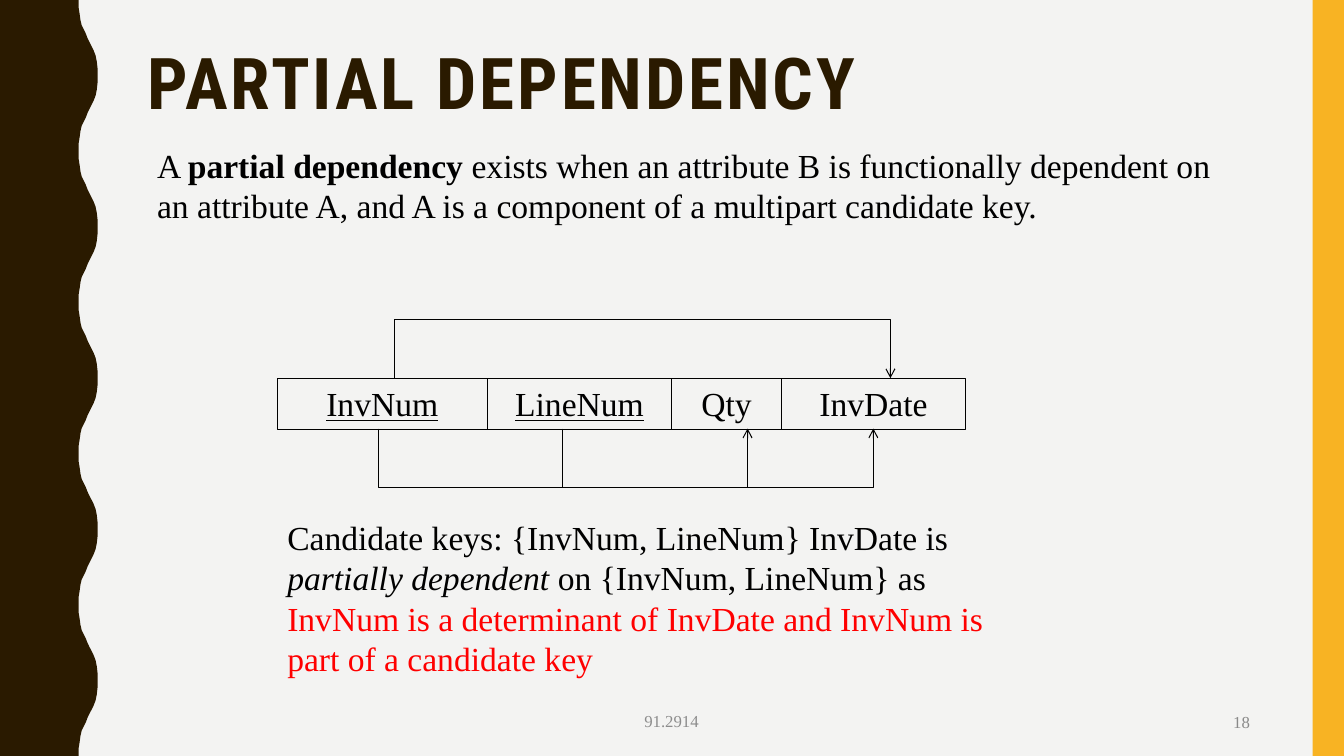
from dataclasses import dataclass
from itertools import accumulate

from lxml import etree
from pptx import Presentation
from pptx.dml.color import RGBColor
from pptx.enum.shapes import MSO_SHAPE
from pptx.enum.text import MSO_ANCHOR, PP_ALIGN
from pptx.oxml.ns import qn
from pptx.util import Cm, Pt

RECT = MSO_SHAPE.RECTANGLE
TOP, MIDDLE = MSO_ANCHOR.TOP, MSO_ANCHOR.MIDDLE
LEFT, CENTER, RIGHT = PP_ALIGN.LEFT, PP_ALIGN.CENTER, PP_ALIGN.RIGHT

COLORS = {
    "paper": "F3F3F2", "brown": "2A1A00", "yellow": "F8B323", "black": "000000",
    "red": "FF0000", "footer": "8C8C8C", "number": "898989",
}
BODY = {"name": "Times New Roman", "size": Pt(24), "color": "black"}
SMALL = BODY | {"size": Pt(12)}
TITLE = {"name": "Roboto Condensed", "size": Pt(51), "color": "brown", "bold": True}

SLIDE_W, SLIDE_H = 33.87, 19.05
ROW_LEFT, ROW_TOP, ROW_H = 6.99, 9.53, 1.3
ROW_BOTTOM = 10.8
LOOP_H = 1.48

Point = tuple[float, float]


@dataclass
class Run:
    text: str
    fmt: dict


@dataclass
class TextBox:
    box: tuple[float, float, float, float]
    runs: list[Run]
    align: PP_ALIGN = LEFT
    anchor: MSO_ANCHOR = TOP


@dataclass
class Attribute:
    name: str
    width: float
    is_key: bool = False


@dataclass
class Dependency:
    start: float
    end: float
    edge: float
    bend: float


def rgb(name: str) -> RGBColor:
    return RGBColor.from_string(COLORS[name])


def write(tf, runs: list[Run], align: PP_ALIGN, anchor: MSO_ANCHOR):
    tf.word_wrap = True
    tf.vertical_anchor = anchor
    p = tf.paragraphs[0]
    p.alignment = align
    for run in runs:
        r = p.add_run()
        r.text = run.text
        for key, value in run.fmt.items():
            if key == "color":
                r.font.color.rgb = rgb(value)
            else:
                setattr(r.font, key, value)
    return p


def add_text(s, item: TextBox):
    tb = s.shapes.add_textbox(*map(Cm, item.box))
    return write(tb.text_frame, item.runs, item.align, item.anchor)


def style(sp, fill: str | None = None, line: str | None = None) -> None:
    sp.shadow.inherit = False
    if fill:
        sp.fill.solid()
        sp.fill.fore_color.rgb = rgb(fill)
    else:
        sp.fill.background()
    if line:
        sp.line.color.rgb = rgb(line)
        sp.line.width = Pt(0.75)
    else:
        sp.line.fill.background()


def add_path(s, points: list[Point], close: bool):
    first, *rest = [(Cm(x), Cm(y)) for x, y in points]
    builder = s.shapes.build_freeform(*first)
    builder.add_line_segments(rest, close=close)
    return builder.convert_to_shape()


def add_dependency(s, dep: Dependency) -> None:
    sp = add_path(s, [(dep.start, dep.edge), (dep.start, dep.bend),
                      (dep.end, dep.bend), (dep.end, dep.edge)], close=False)
    style(sp, line="black")
    etree.SubElement(sp.line._get_or_add_ln(), qn("a:tailEnd"), type="arrow")


def add_attribute(s, attribute: Attribute, left: float) -> None:
    sp = s.shapes.add_shape(RECT, Cm(left), Cm(ROW_TOP), Cm(attribute.width), Cm(ROW_H))
    style(sp, line="black")
    fmt = BODY | {"underline": attribute.is_key}
    write(sp.text_frame, [Run(attribute.name, fmt)], CENTER, TOP)


def wave_points() -> list[Point]:
    """Wavy right edge: half a wave, its mirror, repeated down the slide."""
    waves = 5
    period = SLIDE_H / waves
    half = [(1.98, 0), (1.98, 0.18), (2.01, 0.36), (2.03, 0.51), (2.06, 0.64),
            (2.11, 0.74), (2.16, 0.84), (2.21, 0.97), (2.26, 1.07), (2.31, 1.17),
            (2.36, 1.27), (2.41, 1.4), (2.44, 1.55), (2.46, 1.73), (2.46, 1.9)]
    wave = half + [(x, period - y) for x, y in reversed(half)]
    edge = [(x, y + i * period) for i in range(waves) for x, y in wave]
    return [(0, 0), *edge, (0, SLIDE_H)]


TITLE_BOX = TextBox((3.48, 1.07, 28.27, 4.14), [Run("PARTIAL DEPENDENCY", TITLE)])
TEXTS = [
    TextBox((12.9, 17.65, 8.05, 1.02), [Run("91.2914", SMALL | {"color": "footer"})],
            CENTER, MIDDLE),
    TextBox((23.93, 17.7, 7.82, 0.97), [Run("18", SMALL | {"color": "number"})],
            RIGHT, MIDDLE),
    TextBox((3.71, 3.53, 27.23, 2.31), [
        Run("A ", BODY),
        Run("partial dependency", BODY | {"bold": True}),
        Run(" exists when an attribute B is functionally dependent on an attribute A, "
            "and A is a component of a multipart candidate key.", BODY),
    ]),
    TextBox((6.99, 12.9, 19.25, 4.37), [
        Run("Candidate keys: {InvNum, LineNum} InvDate is ", BODY),
        Run("partially dependent", BODY | {"italic": True}),
        Run(" on {InvNum, LineNum} as ", BODY),
        Run("InvNum is a determinant of InvDate and InvNum is part of a candidate key",
            BODY | {"color": "red"}),
    ]),
]
ATTRIBUTES = [
    Attribute("InvNum", 5.29, True),
    Attribute("LineNum", 4.65, True),
    Attribute("Qty", 2.76),
    Attribute("InvDate", 4.65),
]
DEPENDENCIES = [
    Dependency(14.18, 18.84, ROW_BOTTOM, ROW_BOTTOM + LOOP_H),
    Dependency(9.53, 22.01, ROW_BOTTOM, ROW_BOTTOM + LOOP_H),
    Dependency(9.95, 22.44, ROW_TOP, ROW_TOP - LOOP_H),
]


def main() -> None:
    prs = Presentation()
    prs.slide_width, prs.slide_height = Cm(SLIDE_W), Cm(SLIDE_H)
    s = prs.slides.add_slide(prs.slide_layouts[6])

    # Background and side bands
    s.background.fill.solid()
    s.background.fill.fore_color.rgb = rgb("paper")
    style(add_path(s, wave_points(), close=True), fill="brown")
    band_w = 0.79
    band = s.shapes.add_shape(RECT, Cm(SLIDE_W - band_w), 0, Cm(band_w), Cm(SLIDE_H))
    style(band, fill="yellow")

    # Title
    p = add_text(s, TITLE_BOX)
    p.line_spacing = 0.9
    p.runs[0].font._element.set("spc", "200")

    # Text and footer
    for item in TEXTS:
        add_text(s, item)

    # Relation with its dependencies
    lefts = accumulate((a.width for a in ATTRIBUTES), initial=ROW_LEFT)
    for attribute, left in zip(ATTRIBUTES, lefts):
        add_attribute(s, attribute, left)
    for dep in DEPENDENCIES:
        add_dependency(s, dep)

    prs.save("out.pptx")


if __name__ == "__main__":
    main()
